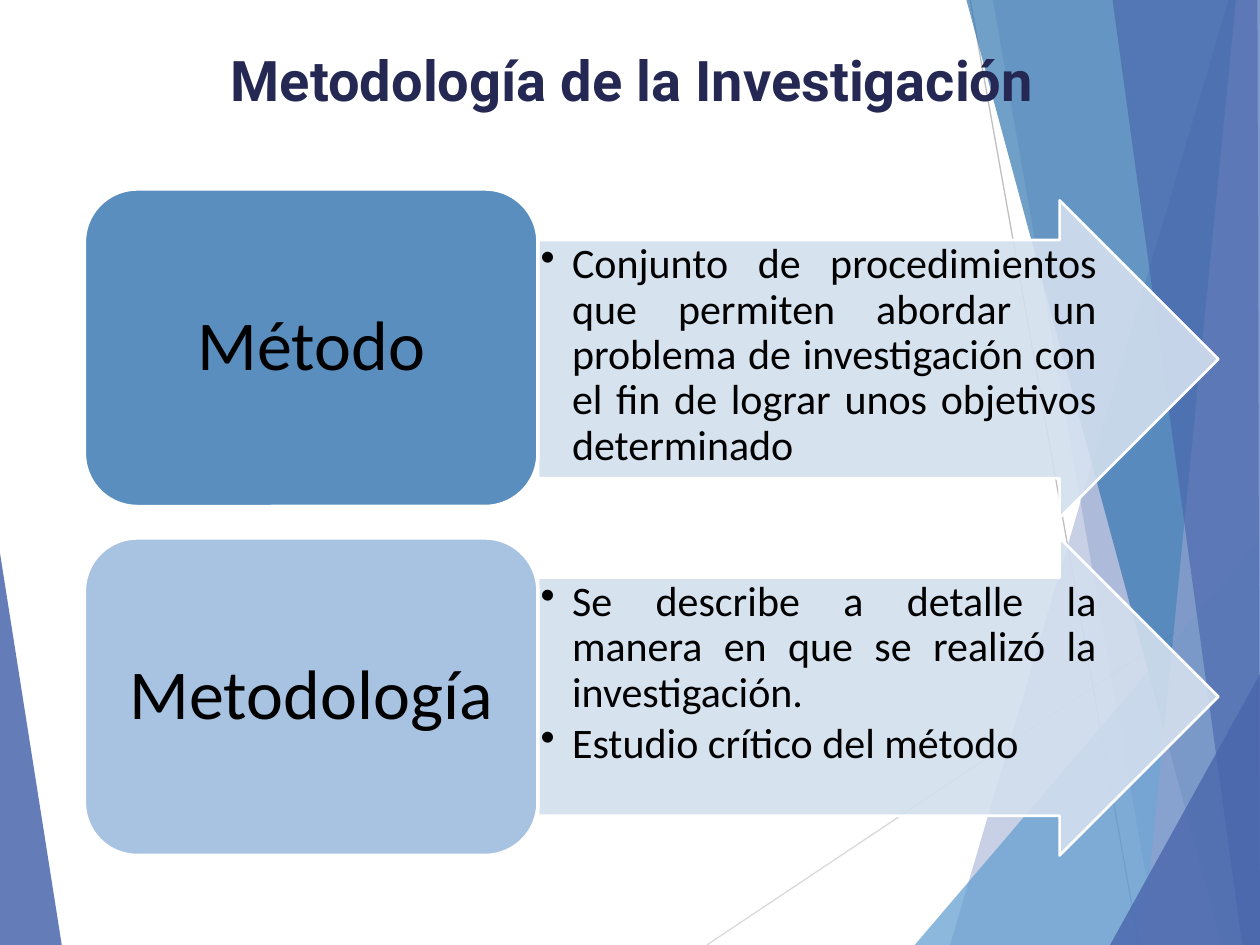
from lxml.etree import SubElement
from pptx import Presentation
from pptx.dml.color import RGBColor
from pptx.enum.shapes import MSO_CONNECTOR, MSO_SHAPE
from pptx.enum.text import MSO_ANCHOR, PP_ALIGN
from pptx.oxml.ns import qn
from pptx.util import Inches, Pt

WIDE, HIGH = Inches(10), Inches(7.5)
UNIT = WIDE / 1000  # grid of 1000 columns by 750 rows

NAVY = RGBColor(0x24, 0x28, 0x52)
INDIGO = RGBColor(0x4A, 0x66, 0xAC)
SKY = RGBColor(0x62, 0x9D, 0xD1)
OCEAN = RGBColor(0x34, 0x77, 0xB2)
LILAC = RGBColor(0x90, 0xA2, 0xCF)
STEEL = RGBColor(0x59, 0x8E, 0xBE)
PALE = RGBColor(0xA8, 0xC2, 0xE1)
MIST = RGBColor(0xD3, 0xDF, 0xEE)
GRAY = RGBColor(0xBF, 0xBF, 0xBF)
SILVER = RGBColor(0xD9, 0xD9, 0xD9)
WHITE = RGBColor(0xFF, 0xFF, 0xFF)
BLACK = RGBColor(0, 0, 0)

# Points in grid units, colour, opacity in percent
LEFT_FACET = ([(0, 439), (49, 750), (0, 750)], INDIGO, 85)
RIGHT_FACETS = [
    ([(975, 0), (754, 750), (1000, 750), (1000, 0)], INDIGO, 30),
    ([(788, 0), (919, 750), (1000, 750), (1000, 0)], INDIGO, 20),
    ([(726, 750), (1000, 429), (1000, 750)], SKY, 72),
    ([(767, 0), (970, 750), (1000, 750), (1000, 0)], OCEAN, 70),
    ([(981, 0), (907, 750), (1000, 750), (1000, 0)], LILAC, 70),
    ([(883, 0), (986, 750), (1000, 750), (998, 0)], INDIGO, 65),
    ([(881, 750), (1000, 535), (1000, 750)], INDIGO, 80),
]
RAYS = [((561, 750), (1000, 457), SILVER), ((770, 0), (904, 750), GRAY)]

# Label, colour, arrow drop as a share of the row height, points
ROWS = [
    ("Método", STEEL, 0.036,
     ["Conjunto de procedimientos que permiten abordar un problema de "
      "investigación con el fin de lograr unos objetivos determinado"]),
    ("Metodología", PALE, 0,
     ["Se describe a detalle la manera en que se realizó la investigación.",
      "Estudio crítico del método"]),
]


def paint(shape, color, alpha=100, edge=None, width=0):
    """Fill a shape and set its outline, if any."""
    shape.shadow.inherit = False
    shape.fill.solid()
    shape.fill.fore_color.rgb = color
    if alpha < 100:
        tone = shape.fill._xPr.find(".//" + qn("a:srgbClr"))
        SubElement(tone, qn("a:alpha"), val=str(alpha * 1000))
    if edge is None:
        shape.line.fill.background()
    else:
        shape.line.color.rgb = edge
        shape.line.width = Pt(width)


def inset(frame, side, end):
    frame.word_wrap = True
    frame.margin_left = frame.margin_right = Inches(side)
    frame.margin_top = frame.margin_bottom = Inches(end)


def style(para, size, color, name, align):
    para.alignment = align
    font = para.font
    font.size, font.name = Pt(size), name
    font.color.rgb = color


def add_facet(slide, points, color, alpha):
    pen = slide.shapes.build_freeform(*points[0], scale=UNIT)
    pen.add_line_segments(points[1:])
    paint(pen.convert_to_shape(), color, alpha)


def add_ray(slide, start, end, color):
    ends = [round(n * UNIT) for n in start + end]
    ray = slide.shapes.add_connector(MSO_CONNECTOR.STRAIGHT, *ends)
    ray.line.color.rgb = color
    ray.line.width = Pt(0.75)
    SubElement(ray._element.spPr, qn("a:effectLst"))


def add_back(slide):
    add_facet(slide, *LEFT_FACET)
    for ray in RAYS:
        add_ray(slide, *ray)
    for facet in RIGHT_FACETS:
        add_facet(slide, *facet)


def add_title(slide, box):
    title = slide.shapes.title
    title.left, title.top, title.width, title.height = box
    slide.shapes._spTree.append(title._element)  # in front of the facets
    frame = title.text_frame
    frame.text = "Metodología de la Investigación"
    frame.vertical_anchor = MSO_ANCHOR.MIDDLE
    inset(frame, 0, 0)
    style(frame.paragraphs[0], 32, NAVY, "Roboto", PP_ALIGN.CENTER)
    frame.paragraphs[0].font.bold = True


def add_bullet(para):
    props = para._p.get_or_add_pPr()
    props.set("marL", str(Inches(0.25)))
    props.set("indent", str(-Inches(0.25)))
    SubElement(props, qn("a:buChar"), char="•")


def add_arrow(slide, box, points):
    arrow = slide.shapes.add_shape(MSO_SHAPE.RIGHT_ARROW, *box)
    arrow.adjustments[0], arrow.adjustments[1] = 0.75, 0.5
    paint(arrow, MIST, 90, WHITE, 1.5)
    frame = arrow.text_frame
    inset(frame, 0.02, 0.02)
    frame.vertical_anchor = MSO_ANCHOR.TOP
    frame.text = "\n".join(points)
    for para in frame.paragraphs:
        style(para, 24, BLACK, "Calibri", PP_ALIGN.JUSTIFY)
        para.line_spacing = 0.9
        para.space_after = Pt(3.6)
        add_bullet(para)


def add_label(slide, box, text, color):
    label = slide.shapes.add_shape(MSO_SHAPE.ROUNDED_RECTANGLE, *box)
    paint(label, color, 100, WHITE, 2)
    frame = label.text_frame
    inset(frame, 0.17, 0.08)
    frame.vertical_anchor = MSO_ANCHOR.MIDDLE
    frame.text = text
    style(frame.paragraphs[0], 40, BLACK, "Calibri", PP_ALIGN.CENTER)
    frame.paragraphs[0].line_spacing = 0.9


def add_rows(slide, box):
    """Stack the rows: label in the left 40 %, arrow in the rest."""
    left, top, width, height = box
    step = height / (len(ROWS) - 0.09)  # gap is 9 % of a step
    tall, split = round(step * 0.91), round(width * 0.4)
    for i, (text, color, drop, points) in enumerate(ROWS):
        y = round(top + i * step)
        lower = y + round(drop * tall)
        add_arrow(slide, (left + split, lower, width - split, tall), points)
        add_label(slide, (left, y, split, tall), text, color)


def main():
    deck = Presentation()
    deck.slide_width, deck.slide_height = WIDE, HIGH
    slide = deck.slides.add_slide(deck.slide_layouts[5])
    add_back(slide)
    add_title(slide, (Inches(0.63), 0, Inches(8.78), Inches(1.25)))
    add_rows(slide, (Inches(0.67), Inches(1.5), Inches(9), Inches(5.29)))
    deck.save("out.pptx")


if __name__ == "__main__":
    main()
